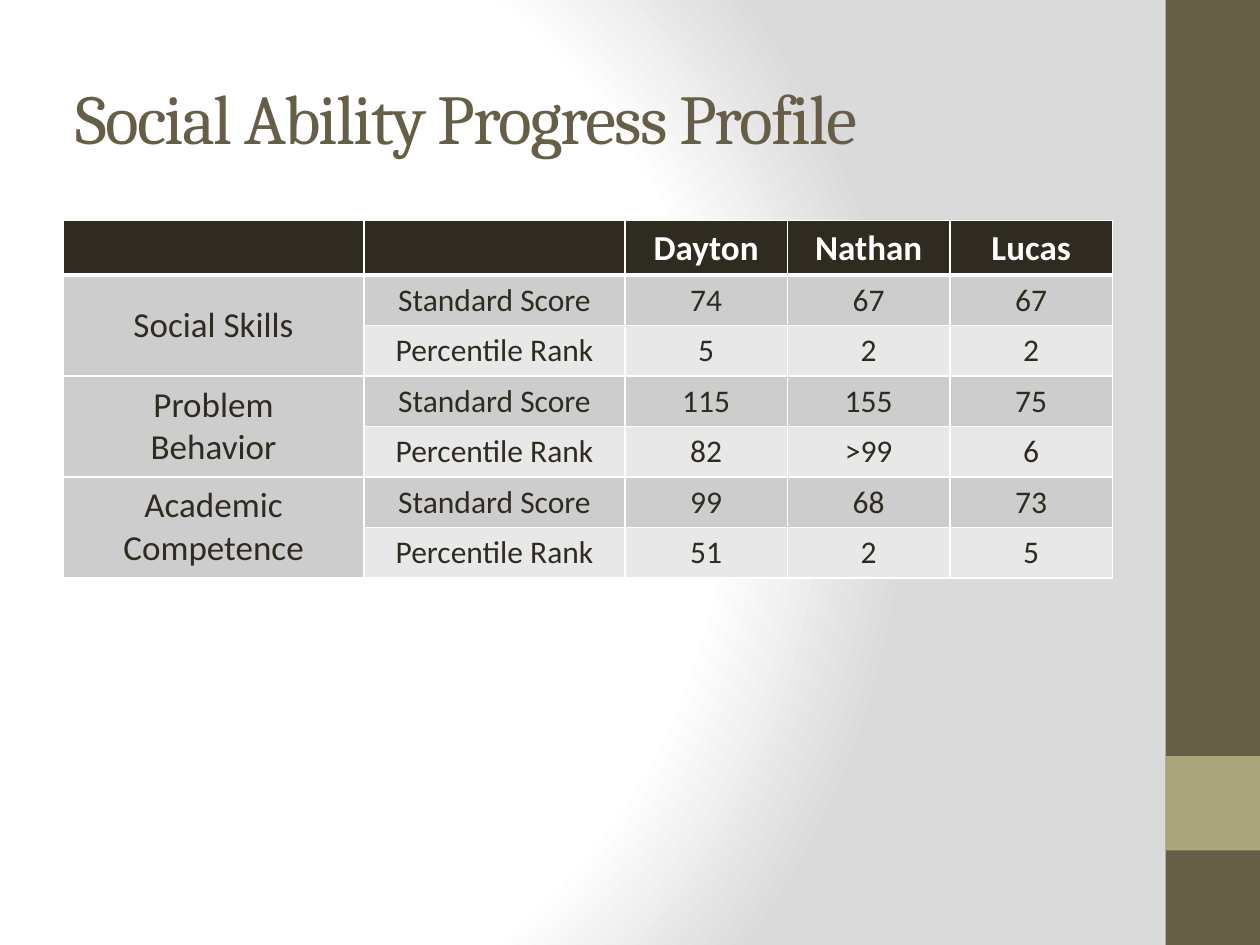
from lxml.etree import SubElement
from pptx import Presentation
from pptx.dml.color import RGBColor
from pptx.enum.shapes import MSO_SHAPE as Shape
from pptx.enum.text import MSO_ANCHOR as Anchor, PP_ALIGN as Align
from pptx.oxml import parse_xml
from pptx.oxml.ns import nsdecls, qn
from pptx.util import Inches, Pt

TITLE = "Social Ability Progress Profile"
STUDENTS = ["Dayton", "Nathan", "Lucas"]
MEASURES = ["Standard Score", "Percentile Rank"]
AREAS = [
    ("Social Skills", [["74", "67", "67"], ["5", "2", "2"]]),
    ("Problem Behavior", [["115", "155", "75"], ["82", ">99", "6"]]),
    ("Academic Competence", [["99", "68", "73"], ["51", "2", "5"]]),
]
COLUMN_WIDTHS = [2.39, 2.07, 1.29, 1.29, 1.29]
ROW_HEIGHTS = [0.41, 0.35, 0.35, 0.38, 0.38, 0.38, 0.38]
SIDE_BARS = [(0, 7.5, "675E47"), (6, 0.75, "A9A57C")]
BACKDROP = [(0, "FFFFFF"), (75, "FFFFFF"), (100, "DADADA")]
DARK, WHITE, BAND_FILLS = "2F2B20", "FFFFFF", ["CDCDCD", "E8E8E8"]


def color(hex_code):
    """Turn a hex string into a colour."""
    return RGBColor.from_string(hex_code)


def paint_background(slide):
    """Fill the slide with a radial gradient."""
    slide.background.fill.solid()
    stops = "".join(
        f'<a:gs pos="{at * 1000}"><a:srgbClr val="{code}"/></a:gs>' for at, code in BACKDROP
    )
    gradient = parse_xml(
        f'<a:gradFill {nsdecls("a")} rotWithShape="1"><a:gsLst>{stops}</a:gsLst>'
        '<a:path path="circle"><a:fillToRect l="20000" t="50000" r="100000" b="50000"/>'
        "</a:path></a:gradFill>"
    )
    solid = next(slide.element.iter(qn("a:solidFill")))
    solid.getparent().replace(solid, gradient)


def add_bar(slide, top, height, fill):
    """Add one block of the right-hand side bar."""
    bar = slide.shapes.add_shape(
        Shape.RECTANGLE, Inches(9.25), Inches(top), Inches(0.75), Inches(height)
    )
    bar.shadow.inherit = False
    bar.fill.solid()
    bar.fill.fore_color.rgb = color(fill)
    bar.line.fill.background()


def write(para, text, font, size, ink, bold=False):
    """Add one formatted run to a paragraph."""
    span = para.add_run()
    span.text = text
    span.font.name, span.font.size, span.font.bold = font, Pt(size), bold
    span.font.color.rgb = color(ink)
    return span


def add_title(slide):
    """Add the title text box."""
    box = slide.shapes.add_textbox(Inches(0.5), Inches(0.3), Inches(8.33), Inches(1.25))
    frame = box.text_frame
    frame.word_wrap = True
    frame.vertical_anchor = Anchor.MIDDLE
    span = write(frame.paragraphs[0], TITLE, "Cambria", 40, "675E47")
    span.font._element.set("spc", "-100")


def style_cell(cell, fill, top=1, bottom=1):
    """Set the borders, fill and margins of a cell."""
    properties = cell._tc.get_or_add_tcPr()
    for side, width in [("L", 1), ("R", 1), ("T", top), ("B", bottom)]:
        line = SubElement(properties, qn(f"a:ln{side}"), w=str(Pt(width)))
        SubElement(SubElement(line, qn("a:solidFill")), qn("a:srgbClr"), val=WHITE)
    cell.fill.solid()
    cell.fill.fore_color.rgb = color(fill)
    cell.margin_left = cell.margin_right = Inches(0.21)
    cell.margin_top = cell.margin_bottom = Inches(0.05)


def fill_cell(cell, text, size, ink=DARK, bold=False):
    """Write centred text into a cell."""
    para = cell.text_frame.paragraphs[0]
    para.alignment = Align.CENTER
    write(para, text, "Calibri", size, ink, bold)


def add_scores(slide):
    """Add the table of scores by area, measure and student."""
    table = slide.shapes.add_table(
        len(ROW_HEIGHTS), len(COLUMN_WIDTHS), Inches(0.5), Inches(1.75),
        Inches(sum(COLUMN_WIDTHS)), Inches(sum(ROW_HEIGHTS)),
    ).table
    for column, width in zip(table.columns, COLUMN_WIDTHS):
        column.width = Inches(width)
    for row, height in zip(table.rows, ROW_HEIGHTS):
        row.height = Inches(height)
    for cell in table.rows[0].cells:
        style_cell(cell, DARK, bottom=3)
    for col, name in enumerate(STUDENTS, 2):
        fill_cell(table.cell(0, col), name, 20, WHITE, True)
    for index, (area, scores) in enumerate(AREAS):
        first = 1 + index * len(MEASURES)
        for offset, (measure, values) in enumerate(zip(MEASURES, scores)):
            row = first + offset
            top = 3 if row == 1 else 1
            style_cell(table.cell(row, 0), BAND_FILLS[0], top)
            for col, text in enumerate([measure, *values], 1):
                style_cell(table.cell(row, col), BAND_FILLS[offset], top)
                fill_cell(table.cell(row, col), text, 18)
        label = table.cell(first, 0)
        label.merge(table.cell(first + len(MEASURES) - 1, 0))
        label.vertical_anchor = Anchor.MIDDLE
        fill_cell(label, area, 20)


def main():
    """Build and save the slide."""
    deck = Presentation()
    deck.slide_width, deck.slide_height = Inches(10), Inches(7.5)
    page = deck.slides.add_slide(deck.slide_layouts[6])
    paint_background(page)
    for bar in SIDE_BARS:
        add_bar(page, *bar)
    add_title(page)
    add_scores(page)
    deck.save("out.pptx")


if __name__ == "__main__":
    main()
